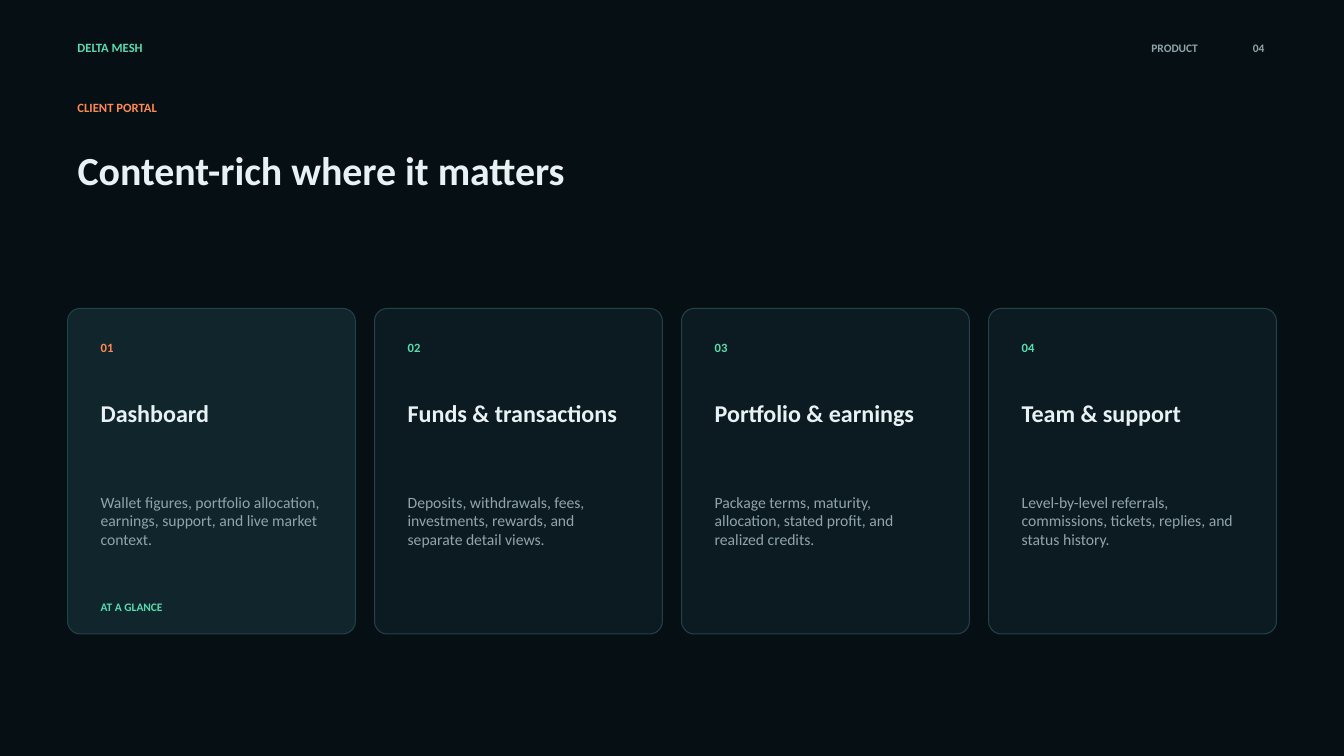
from pptx import Presentation
from pptx.util import Inches, Pt
from pptx.dml.color import RGBColor
from pptx.enum.shapes import MSO_SHAPE
from pptx.enum.text import PP_ALIGN as AL, MSO_ANCHOR as ANCHOR, MSO_AUTO_SIZE as FIT

W, H = 13.33, 7.5
GREEN, ORANGE, WHITE, GREY = "56DCB0", "FF8A50", "E8F1F3", "91A4AC"


def rgb(value):
    return RGBColor.from_string(value)


def put_text(s, text, box, size, color, bold=True, align=AL.LEFT, sp=None):
    """Write one paragraph into a given placeholder or a new text box."""
    x, y, w, h = map(Inches, box)
    if sp is None:
        sp = s.shapes.add_textbox(x, y, w, h)
    sp.left, sp.top, sp.width, sp.height = x, y, w, h
    tf = sp.text_frame
    frame = {"word_wrap": True, "auto_size": FIT.NONE, "vertical_anchor": ANCHOR.MIDDLE}
    for name, value in frame.items():
        setattr(tf, name, value)
    p = tf.paragraphs[0]
    p.alignment = align
    r = p.add_run()
    r.text = text
    for name, value in {"name": "Calibri", "size": Pt(size), "bold": bold}.items():
        setattr(r.font, name, value)
    r.font.color.rgb = rgb(color)


prs = Presentation()
prs.slide_width, prs.slide_height = Inches(W), Inches(H)
s = prs.slides.add_slide(prs.slide_layouts[5])
s.background.fill.solid()
s.background.fill.fore_color.rgb = rgb("061014")

# Grid: four equal columns between the side margins
MARGIN, GAP, COLS = 0.67, 0.19, 4
CARD_W = (W - 2 * MARGIN - (COLS - 1) * GAP) / COLS
CARD_TOP, CARD_H = 3.06, 3.23
PAD = 0.23
TEXT_W = CARD_W - 2 * PAD

# Header line
put_text(s, "DELTA MESH", (MARGIN, 0.35, 2.4, 0.25), 9, GREEN)
put_text(s, "PRODUCT", (9.17, 0.35, 2.81, 0.25), 8.2, GREY, align=AL.RIGHT)
put_text(s, "04", (12.08, 0.35, 0.56, 0.25), 8.2, GREY, align=AL.RIGHT)

# Section label and title
put_text(s, "CLIENT PORTAL", (MARGIN, 0.94, 3.75, 0.25), 9, ORANGE)
put_text(s, "Content-rich where it matters", (MARGIN, 1.27, 11.46, 0.83), 28.5, WHITE,
         sp=s.shapes.title)

# Cards: heading, description, footer; the first one is highlighted
cards = [
    ("Dashboard", "Wallet figures, portfolio allocation, earnings, support, "
     "and live market context.", "AT A GLANCE"),
    ("Funds & transactions", "Deposits, withdrawals, fees, investments, rewards, "
     "and separate detail views.", ""),
    ("Portfolio & earnings", "Package terms, maturity, allocation, stated profit, "
     "and realized credits.", ""),
    ("Team & support", "Level-by-level referrals, commissions, tickets, replies, "
     "and status history.", ""),
]
for i, (heading, body, footer) in enumerate(cards):
    fill, accent = ("0C1B21", GREEN) if i else ("10252C", ORANGE)
    left = MARGIN + i * (CARD_W + GAP)
    card = s.shapes.add_shape(MSO_SHAPE.ROUNDED_RECTANGLE, Inches(left), Inches(CARD_TOP),
                              Inches(CARD_W), Inches(CARD_H))
    card.adjustments[0] = 0.044
    card.shadow.inherit = False
    card.fill.solid()
    card.fill.fore_color.rgb = rgb(fill)
    card.line.color.rgb = rgb("24404A")
    card.line.width = Pt(0.75)

    x = left + PAD
    put_text(s, f"{i + 1:02}", (x, CARD_TOP + 0.24, 0.62, 0.29), 9, accent)
    put_text(s, heading, (x, CARD_TOP + 0.71, TEXT_W, 0.65), 17.2, WHITE)
    put_text(s, body, (x, CARD_TOP + 1.5, TEXT_W, 1.21), 11.2, GREY, bold=False)
    if footer:
        put_text(s, footer, (x, CARD_TOP + 2.84, TEXT_W, 0.25), 8.2, GREEN)

prs.save("out.pptx")
